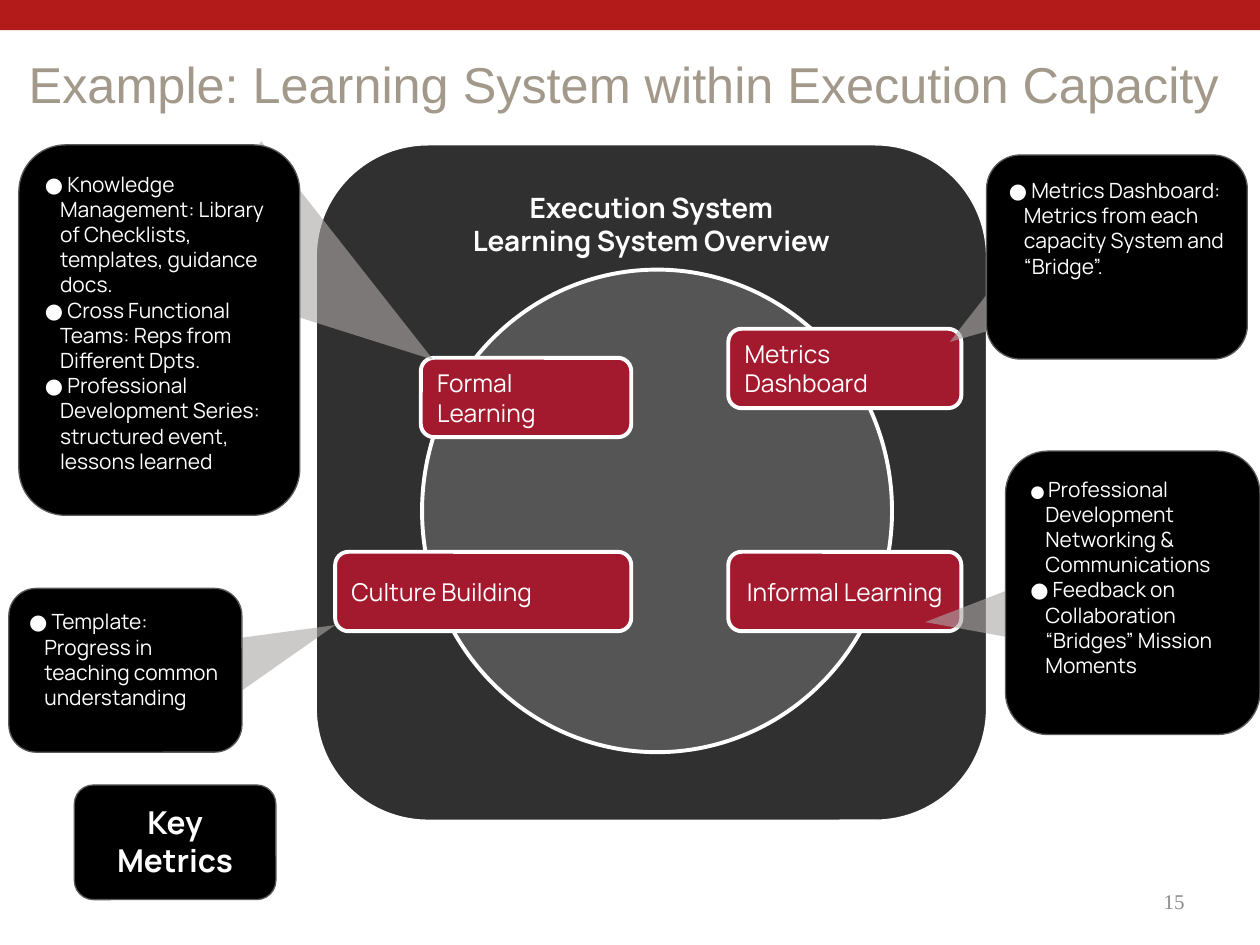
from dataclasses import dataclass

from lxml.etree import SubElement
from pptx import Presentation
from pptx.dml.color import RGBColor as Rgb
from pptx.enum.shapes import MSO_SHAPE as Shape
from pptx.enum.text import MSO_ANCHOR as Anchor, PP_ALIGN as Align
from pptx.oxml.ns import qn
from pptx.util import Inches, Pt


@dataclass(frozen=True)
class Theme:
    """Colours, fonts and type sizes of the deck."""
    banner: str = "B31B1B"
    title: str = "A2998B"
    number: str = "8C8C8C"
    frame: str = "303030"
    circle: str = "555555"
    topic: str = "A3192E"
    note: str = "000000"
    note_edge: str = "595959"
    pointer: str = "ADA7A7"
    white: str = "FFFFFF"
    body_font: str = "Manrope"
    title_font: str = "Arial"
    number_font: str = "Times New Roman"
    title_size: float = 28.8
    key_size: float = 18
    heading_size: float = 16
    topic_size: float = 14
    note_size: float = 12
    small_bullet_size: float = 9.5
    thin: float = 0.75
    thick: float = 2.25


class SlideBuilder:
    """Draws styled elements on the current slide."""

    def __init__(self, slide, theme):
        self.slide = slide
        self.theme = theme

    def shape(self, kind, place, fill, edge=None, width=0):
        shape = self.slide.shapes.add_shape(kind, *map(Inches, place))
        shape.shadow.inherit = False
        shape.fill.solid()
        shape.fill.fore_color.rgb = Rgb.from_string(fill)
        if edge:
            shape.line.color.rgb = Rgb.from_string(edge)
            shape.line.width = Pt(width)
        else:
            shape.line.fill.background()
        return shape

    def set_text(self, box, lines, size, font=None, color=None, bold=False,
                 align=Align.LEFT, anchor=Anchor.TOP):
        frame = box.text_frame
        frame.word_wrap = True
        frame.vertical_anchor = anchor
        frame.text = "\n".join(lines)
        for para in frame.paragraphs:
            para.alignment = align
            for span in para.runs:
                span.font.name = font or self.theme.body_font
                span.font.size = Pt(size)
                span.font.bold = bold
                span.font.color.rgb = Rgb.from_string(color or self.theme.white)
        return frame

    def label(self, place, text, **style):
        box = self.slide.shapes.add_textbox(*map(Inches, place))
        self.set_text(box, [text], anchor=Anchor.MIDDLE, **style)

    def panel(self, place, fill, edge, width, lines, size, **style):
        box = self.shape(Shape.ROUNDED_RECTANGLE, place, fill, edge, width)
        frame = self.set_text(box, lines, size, **style)
        frame.margin_left = frame.margin_right = Inches(0.1)
        frame.margin_top = frame.margin_bottom = Inches(0.1)
        return frame

    def topic(self, place, text, align=Align.LEFT):
        theme = self.theme
        self.panel(place, theme.topic, theme.white, theme.thick, [text],
                   theme.topic_size, align=align, anchor=Anchor.MIDDLE)

    def note(self, place, items):
        theme = self.theme
        frame = self.panel(place, theme.note, theme.note_edge, theme.thin,
                           [f"● {item}" for item in items], theme.note_size)
        for para in frame.paragraphs:
            properties = para._p.get_or_add_pPr()
            properties.set("marL", str(Inches(0.12)))
            properties.set("indent", str(Inches(-0.12)))
        return frame

    def shrink_bullet(self, para):
        span = para.runs[0]
        words = para.add_run()
        words.text = span.text[2:]
        words.font.name = span.font.name
        words.font.size = span.font.size
        words.font.color.rgb = span.font.color.rgb
        span.text = span.text[:2]
        span.font.size = Pt(self.theme.small_bullet_size)

    def pointer(self, place, rotation):
        triangle = self.shape(Shape.ISOSCELES_TRIANGLE, place, self.theme.pointer)
        triangle.rotation = rotation
        color = triangle._element.spPr.find(f"{qn('a:solidFill')}/{qn('a:srgbClr')}")
        SubElement(color, qn("a:alpha"), val="61000")


def main():
    theme = Theme()
    deck = Presentation()
    deck.slide_width, deck.slide_height = Inches(10), Inches(7.5)
    page = SlideBuilder(deck.slides.add_slide(deck.slide_layouts[6]), theme)

    page.shape(Shape.RECTANGLE, (0, 0, 10, 0.24), theme.banner)
    page.label((7.17, 6.95, 2.33, 0.4), "15", size=theme.note_size,
               font=theme.number_font, color=theme.number, align=Align.RIGHT)
    page.label((0.13, 0.29, 9.73, 0.75),
               "Example: Learning System within Execution Capacity",
               size=theme.title_size, font=theme.title_font, color=theme.title)

    page.panel((2.51, 1.15, 5.32, 5.36), theme.frame, theme.white, theme.thin,
               ["Execution System", "Learning System Overview"],
               theme.heading_size, bold=True, align=Align.CENTER)
    page.shape(Shape.OVAL, (3.35, 2.14, 3.73, 3.83), theme.circle,
               theme.white, theme.thick)

    page.topic((3.34, 2.84, 1.67, 0.63), "Formal Learning")
    page.topic((2.66, 4.38, 2.35, 0.63), "Culture Building")
    page.topic((5.78, 4.38, 1.85, 0.63), "Informal Learning", Align.CENTER)
    page.topic((5.78, 2.61, 1.85, 0.63), "Metrics Dashboard")

    page.panel((0.59, 6.23, 1.6, 0.91), theme.note, theme.note_edge, theme.thin,
               ["Key Metrics"], theme.key_size, bold=True, align=Align.CENTER)

    page.pointer((1.92, 1.2, 1.3, 2.11), 124.7)
    page.note((0.15, 1.15, 2.23, 2.94), [
        "Knowledge Management: Library of Checklists, templates, guidance docs.",
        "Cross Functional Teams: Reps from Different Dpts.",
        "Professional Development Series: structured event, lessons learned",
    ])
    page.pointer((1.83, 4.59, 0.57, 1.17), 68.6)
    page.note((0.07, 4.67, 1.85, 1.3),
              ["Template: Progress in teaching common understanding"])
    page.pointer((7.67, 1.56, 0.96, 1.48), 236)
    page.note((7.83, 1.23, 2.07, 1.62), [
        "Metrics Dashboard: Metrics from each capacity System and “Bridge”.",
    ])
    page.pointer((7.65, 4.16, 0.8, 1.42), 264.6)
    informal = page.note((7.98, 3.58, 2.02, 2.25), [
        "Professional Development Networking & Communications",
        "Feedback on Collaboration “Bridges” Mission Moments",
    ])
    page.shrink_bullet(informal.paragraphs[0])

    deck.save("out.pptx")


if __name__ == "__main__":
    main()
